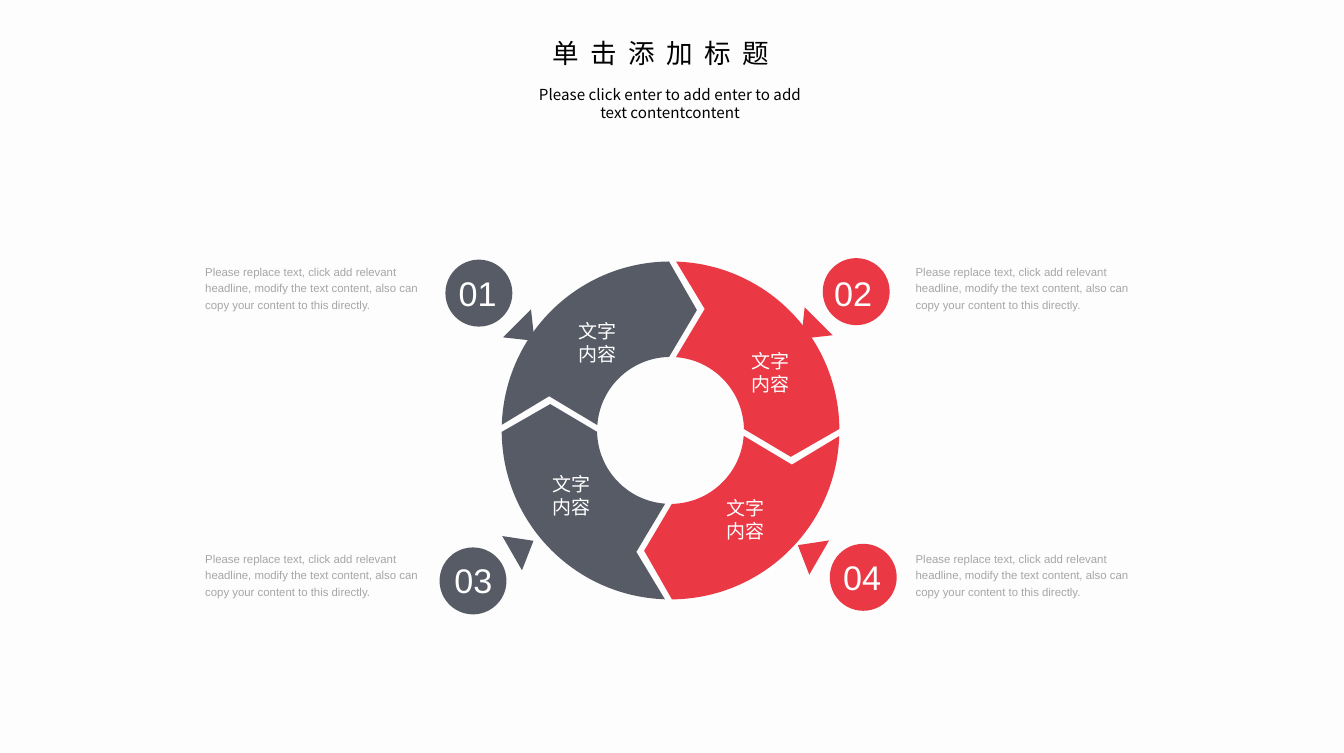
import math

import lxml.etree
import pptx
import pptx.dml.color
import pptx.enum.shapes
import pptx.enum.text
import pptx.oxml.ns
import pptx.util

RED = pptx.dml.color.RGBColor(0xEA, 0x39, 0x45)
SLATE = pptx.dml.color.RGBColor(0x57, 0x5B, 0x66)
WHITE = pptx.dml.color.RGBColor(0xFF, 0xFF, 0xFF)
GREY = pptx.dml.color.RGBColor(0xA6, 0xA6, 0xA6)
BLACK = pptx.dml.color.RGBColor(0, 0, 0)
PAPER = pptx.dml.color.RGBColor(0xFD, 0xFD, 0xFD)

CJK = "Noto Sans CJK SC"
LEFT = pptx.enum.text.PP_ALIGN.LEFT
CENTER = pptx.enum.text.PP_ALIGN.CENTER
TOP = pptx.enum.text.MSO_ANCHOR.TOP
MIDDLE = pptx.enum.text.MSO_ANCHOR.MIDDLE

STYLES = {
    "title": dict(size=14, name=CJK, color=BLACK, align=LEFT, anchor=TOP,
                  spacing=pptx.util.Pt(17.3), tracking=600, pad=(7.2, 3.6), wrap=False),
    "subtitle": dict(size=8, name=CJK, color=BLACK, align=CENTER, anchor=TOP,
                     spacing=pptx.util.Pt(9.6), tracking=0, pad=(7.2, 3.6), wrap=False),
    "number": dict(size=18, name="Arial", color=WHITE, align=CENTER, anchor=MIDDLE,
                   spacing=1.0, tracking=0, pad=(0, 5), wrap=True),
    "label": dict(size=10, name="Arial", color=WHITE, align=CENTER, anchor=MIDDLE,
                  spacing=pptx.util.Pt(12), tracking=0, pad=(0, 0), wrap=True),
    "body": dict(size=6, name="Arial", color=GREY, align=LEFT, anchor=TOP,
                 spacing=1.2, tracking=0, pad=(0, 0), wrap=True),
}

BODY = ("Please replace text, click add relevant headline, modify the text "
        "content, also can copy your content to this directly.")
RING_CENTER = (353.5, 226.8)
OUTER, INNER = 89, 38.7
BADGE = 35.3


def arc(radius, start, end):
    """Return the four Bezier points of a circular arc, angles in degrees."""
    a, b = math.radians(start), math.radians(end)
    pull = 4 / 3 * math.tan((b - a) / 4)
    unit = [(math.cos(a), math.sin(a)),
            (math.cos(a) - pull * math.sin(a), math.sin(a) + pull * math.cos(a)),
            (math.cos(b) + pull * math.sin(b), math.sin(b) - pull * math.cos(b)),
            (math.cos(b), math.sin(b))]
    return [(radius * x, radius * y) for x, y in unit]


class Slide:
    """Draws styled elements on the current slide, in points."""

    def __init__(self, deck, styles):
        self.styles = styles
        self.slide = deck.slides.add_slide(deck.slide_layouts[6])
        self.slide.background.fill.solid()
        self.slide.background.fill.fore_color.rgb = PAPER

    def paint(self, shape, color):
        """Give a shape a flat fill."""
        shape.shadow.inherit = False
        shape.fill.solid()
        shape.fill.fore_color.rgb = color
        shape.line.fill.background()

    def circle(self, left, top, size, color):
        """Add a filled circle."""
        box = [pptx.util.Pt(v) for v in (left, top, size, size)]
        oval = pptx.enum.shapes.MSO_SHAPE.OVAL
        self.paint(self.slide.shapes.add_shape(oval, *box), color)

    def outline(self, points, center, angle, color, curves=()):
        """Add a turned outline; each curve index takes three points as a Bezier."""
        cos, sin = math.cos(math.radians(angle)), math.sin(math.radians(angle))
        placed = [(100 * (center[0] + x * cos - y * sin),
                   100 * (center[1] + x * sin + y * cos)) for x, y in points]
        builder = self.slide.shapes.build_freeform(*placed[0], scale=pptx.util.Pt(1) / 100)
        builder.add_line_segments(placed[1:], close=True)
        shape = builder.convert_to_shape()
        moves = list(shape._element.iter(pptx.oxml.ns.qn("a:lnTo")))
        for first in curves:
            bezier = lxml.etree.Element(pptx.oxml.ns.qn("a:cubicBezTo"))
            moves[first - 1].addprevious(bezier)
            for move in moves[first - 1:first + 2]:
                bezier.append(move[0])
                move.getparent().remove(move)
        self.paint(shape, color)

    def text(self, words, style, left, top, width, height):
        """Add a text box in a named style."""
        look = self.styles[style]
        box = [pptx.util.Pt(v) for v in (left, top, width, height)]
        frame = self.slide.shapes.add_textbox(*box).text_frame
        across, down = [pptx.util.Pt(v) for v in look["pad"]]
        layout = dict(margin_left=across, margin_right=across, margin_top=down,
                      margin_bottom=down, word_wrap=look["wrap"],
                      vertical_anchor=look["anchor"])
        for key, value in layout.items():
            setattr(frame, key, value)
        frame.text = words
        for paragraph in frame.paragraphs:
            for key, value in dict(alignment=look["align"],
                                   line_spacing=look["spacing"]).items():
                setattr(paragraph, key, value)
            for run in paragraph.runs:
                for key, value in dict(size=pptx.util.Pt(look["size"]),
                                       name=look["name"]).items():
                    setattr(run.font, key, value)
                run.font.color.rgb = look["color"]
                properties = run._r.get_or_add_rPr()
                properties.set("spc", str(look["tracking"]))
                east_asian = lxml.etree.SubElement(properties, pptx.oxml.ns.qn("a:ea"))
                east_asian.set("typeface", CJK)


def main():
    """Build the four-step cycle slide."""
    deck = pptx.Presentation()
    deck.slide_width = pptx.util.Pt(708.5)
    deck.slide_height = pptx.util.Pt(396.7)
    page = Slide(deck, STYLES)

    pointer = [(-6.5, -10.4), (-6.5, 10.4), (6.5, 0)]
    steps = [
        ("01", SLATE, (234.8, 136.8), (277.2, 175), 45, (234.4, 141.1), (108.2, 138.2)),
        ("02", RED, (433.7, 136), (427, 173.9), 135, (432.4, 141.1), (482.7, 138.2)),
        ("03", SLATE, (231.7, 288.4), (275.6, 288.2), -30, (232.2, 292.3), (108.2, 289.4)),
        ("04", RED, (437.4, 286.5), (426.2, 290.5), 210, (437.2, 290.9), (482.7, 289.4)),
    ]
    for number, color, badge, tip, angle, digits, body in steps:
        page.circle(*badge, BADGE, color)
        page.outline(pointer, tip, angle, color)
        page.text(number, "number", *digits, 34.6, 26.6)
        page.text(BODY, "body", *body, 114, 26)

    segment = ([(13.9, -63.4)] + arc(OUTER, 269.5, 181.9) + [(-64, -18)]
               + arc(INNER, 184.2, 268.9))
    ring = [(SLATE, (301, 161.6)), (RED, (392.2, 177.5)),
            (RED, (378.7, 254.9)), (SLATE, (287.3, 242.4))]
    for turn, (color, label) in enumerate(ring):
        page.outline(segment, RING_CENTER, 90 * turn, color, curves=(2, 7))
        page.text("文字内容", "label", *label, 28.1, 37.4)

    page.text("单击添加标题", "title", 284.1, 15.2, 135.4, 24.5)
    page.text("Please click enter to add enter to add\ntext contentcontent",
              "subtitle", 272.7, 41.2, 161.3, 26.6)
    deck.save("out.pptx")


if __name__ == "__main__":
    main()
